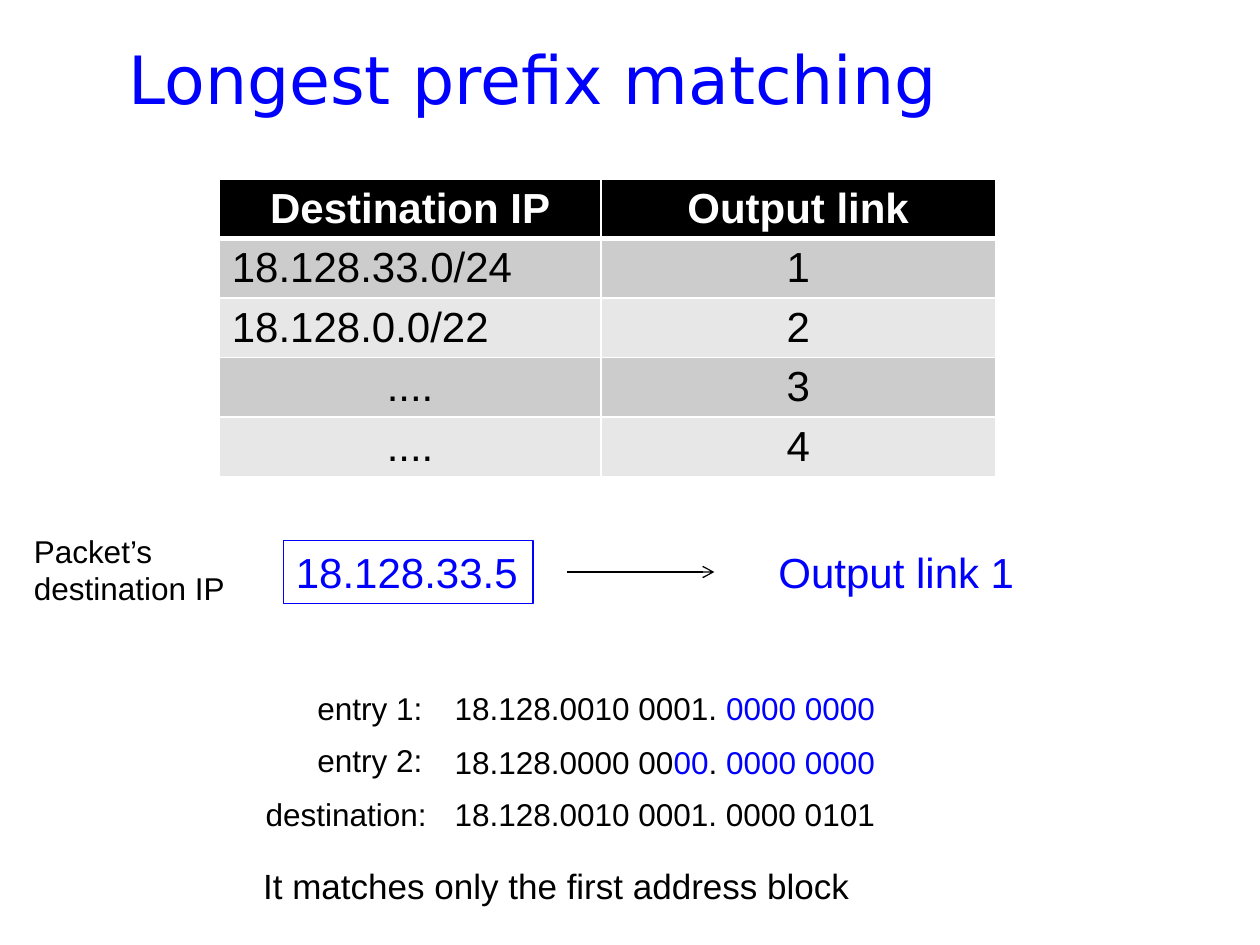
"""Build a slide that explains longest prefix matching."""
from lxml import etree
from pptx import Presentation
from pptx.dml.color import RGBColor
from pptx.enum.shapes import MSO_CONNECTOR
from pptx.enum.text import MSO_ANCHOR, MSO_AUTO_SIZE, PP_ALIGN
from pptx.oxml.ns import qn
from pptx.util import Inches, Pt

STRAIGHT = MSO_CONNECTOR.STRAIGHT
TOP = MSO_ANCHOR.TOP
FIT_SHAPE = MSO_AUTO_SIZE.SHAPE_TO_FIT_TEXT
LEFT, CENTER = PP_ALIGN.LEFT, PP_ALIGN.CENTER

BLACK = RGBColor(0x00, 0x00, 0x00)
WHITE = RGBColor(0xFF, 0xFF, 0xFF)
BLUE = RGBColor(0x00, 0x00, 0xFF)
DARK_BAND = RGBColor(0xCC, 0xCC, 0xCC)
LIGHT_BAND = RGBColor(0xE7, 0xE7, 0xE7)

ROUTES = [
    ("Destination IP", "Output link"),
    ("18.128.33.0/24", "1"),
    ("18.128.0.0/22", "2"),
    ("....", "3"),
    ("....", "4"),
]
COLUMN_WIDTHS = (3.03, 3.13)
ROW_HEIGHT = 0.47

ENTRY_LABELS = [
    ("entry 1:", 2.42, 5.42, 1.04),
    ("entry 2:", 2.42, 5.83, 1.04),
    ("destination:", 2.01, 6.26, 1.49),
]
ADDRESSES = [
    (5.42, [("18.128.0010 0001. ", BLACK), ("0000 0000", BLUE)]),
    (5.85, [("18.128.0000 00", BLACK), ("00", BLUE), (". ", BLACK),
            ("0000 0000", BLUE)]),
    (6.26, [("18.128.0010 0001. 0000 0101", BLACK)]),
]


def style_font(font, size, color, name="Arial"):
    """Set the size, colour and typeface of a font."""
    font.size = Pt(size)
    font.name = name
    font.color.rgb = color


def add_title(slide, text):
    """Place and format the title placeholder."""
    title = slide.shapes.title
    title.left, title.top = Inches(0.92), Inches(0.25)
    title.width, title.height = Inches(8.83), Inches(0.92)
    title.text_frame.text = text
    title.text_frame.vertical_anchor = TOP
    para = title.text_frame.paragraphs[0]
    para.alignment = LEFT
    style_font(para.font, 38, BLUE, "DejaVu Sans")


def add_text(slide, left, top, width, height, lines, size=18, color=BLACK):
    """Add an unwrapped text box with one paragraph per line."""
    box = slide.shapes.add_textbox(
        Inches(left), Inches(top), Inches(width), Inches(height))
    frame = box.text_frame
    frame.word_wrap = False
    frame.auto_size = FIT_SHAPE
    frame.text = "\n".join(lines)
    for para in frame.paragraphs:
        style_font(para.font, size, color)
    return box


def add_address(slide, top, spans):
    """Add a binary address whose host bits are coloured."""
    box = add_text(slide, 3.51, top, 3.57, 0.4, [])
    para = box.text_frame.paragraphs[0]
    for text, color in spans:
        span = para.add_run()
        span.text = text
        style_font(span.font, 18, color)


def set_border(cell, side, points):
    """Give one side of a table cell a white border."""
    border = etree.Element(qn(f"a:{side}"), w=str(Pt(points)))
    fill = etree.SubElement(border, qn("a:solidFill"))
    etree.SubElement(fill, qn("a:srgbClr"), val=str(WHITE))
    cell._tc.get_or_add_tcPr().insert(0, border)


def add_route_table(slide):
    """Add the forwarding table with a black header and grey bands."""
    table = slide.shapes.add_table(
        len(ROUTES), len(COLUMN_WIDTHS), Inches(1.74), Inches(1.42),
        Inches(sum(COLUMN_WIDTHS)), Inches(ROW_HEIGHT * len(ROUTES))).table
    for column, width in zip(table.columns, COLUMN_WIDTHS):
        column.width = Inches(width)
    for row, values in enumerate(ROUTES):
        header = row == 0
        band = DARK_BAND if row % 2 else LIGHT_BAND
        for column, value in enumerate(values):
            cell = table.cell(row, column)
            cell.text = value
            cell.fill.solid()
            cell.fill.fore_color.rgb = BLACK if header else band
            if header:
                set_border(cell, "lnB", 3)
            para = cell.text_frame.paragraphs[0]
            para.alignment = LEFT if "/" in value else CENTER
            para.font.bold = header
            style_font(para.font, 24, WHITE if header else BLACK)


def add_arrow(slide, start, end, top):
    """Add a thin horizontal arrow."""
    arrow = slide.shapes.add_connector(
        STRAIGHT, Inches(start), Inches(top), Inches(end), Inches(top))
    arrow.line.color.rgb = BLACK
    arrow.line.width = Pt(0.75)
    etree.SubElement(arrow.line._get_or_add_ln(), qn("a:tailEnd"), type="arrow")
    etree.SubElement(arrow._element.spPr, qn("a:effectLst"))


def main():
    """Build and save the deck."""
    deck = Presentation()
    deck.slide_width, deck.slide_height = Inches(10), Inches(7.5)
    slide = deck.slides.add_slide(deck.slide_layouts[5])

    add_title(slide, "Longest prefix matching")
    add_route_table(slide)

    packet = add_text(slide, 2.25, 4.29, 1.98, 0.5, ["18.128.33.5"], 24, BLUE)
    packet.line.color.rgb = BLUE
    packet.line.width = Pt(0.75)
    add_text(slide, 0.17, 4.17, 1.73, 0.71, ["Packet’s", "destination IP"])
    add_arrow(slide, 4.5, 5.67, 4.54)
    add_text(slide, 6.08, 4.29, 2.09, 0.5, ["Output link 1"], 24, BLUE)

    add_text(slide, 1.99, 6.81, 4.97, 0.44,
             ["It matches only the first address block"], 20)
    for top, spans in ADDRESSES:
        add_address(slide, top, spans)
    for label, left, top, width in ENTRY_LABELS:
        add_text(slide, left, top, width, 0.4, [label])

    deck.save("out.pptx")


if __name__ == "__main__":
    main()
